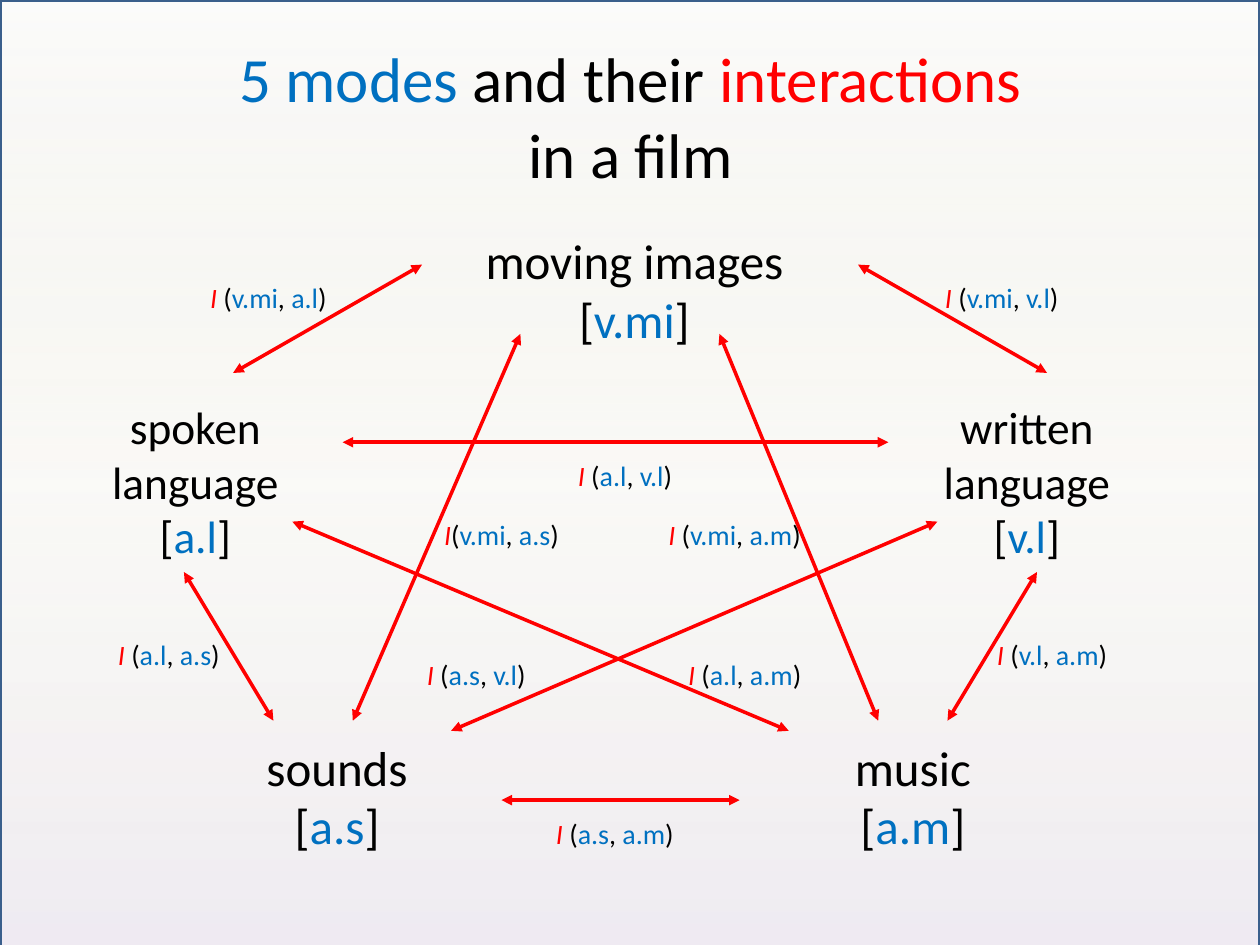
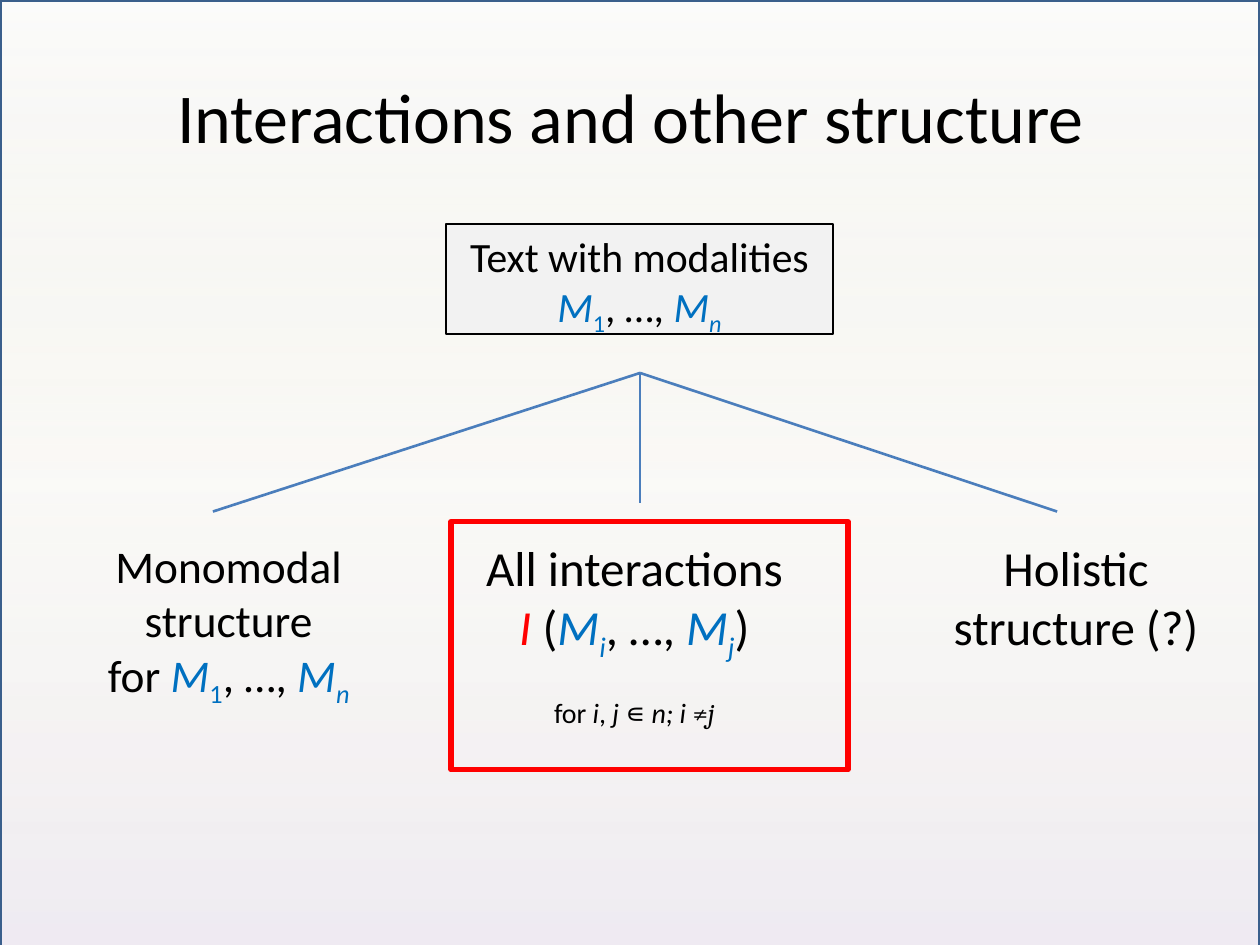
from lxml import etree
from pptx import Presentation
from pptx.dml.color import RGBColor
from pptx.enum.shapes import MSO_CONNECTOR, MSO_SHAPE
from pptx.enum.text import MSO_ANCHOR, PP_ALIGN
from pptx.oxml import parse_xml
from pptx.oxml.ns import nsdecls, qn
from pptx.util import Pt

RECT, STRAIGHT = MSO_SHAPE.RECTANGLE, MSO_CONNECTOR.STRAIGHT
TOP, MIDDLE, CENTER = MSO_ANCHOR.TOP, MSO_ANCHOR.MIDDLE, PP_ALIGN.CENTER
PX = 9144  # EMU per px, 100 px to the inch

# ---- Theme ----
THEME = {
    "font": "Calibri", "math_font": "Cambria",
    "text": "000000", "mode": "0070C0", "action": "FF0000",
    "frame": "3A5F8C", "branch": "4B7EBC", "panel": "F2F2F2",
    "gradient": [(0, "F2F2F2", 30), (50, "C4BD97", 7), (100, "B3A2C7", 22)],
    "title": 40, "long_title": 36, "node": 28, "tight_node": 25.9,
    "root": 23.8, "label": 16,
}
# Run styles: colour key, italic, baseline in percent, font key
STYLES = {
    "text": ("text", False, 0, "font"),
    "it": ("text", True, 0, "font"),
    "mode": ("mode", False, 0, "font"),
    "var": ("mode", True, 0, "font"),
    "sub": ("mode", False, -25, "font"),
    "subvar": ("mode", True, -25, "font"),
    "act": ("action", False, 0, "font"),
    "I": ("action", True, 0, "font"),
    "math": ("text", False, 0, "math_font"),
    "mathvar": ("text", True, 0, "math_font"),
}

# ---- Content shared by both slides ----
SLIDE_SIZE = (1000, 750)
BACKDROP_BOX = (0, 0, 1000, 769)
TITLE_BOX = (114, 29, 773, 125)
BREAK = ("\n", "text")
MODALITIES = [("M", "var"), ("1", "sub"), (", …, ", "text"), ("M", "var"), ("n", "subvar")]

# ---- Slide 1: modes and interactions ----
MODES_TITLE = [("5 modes ", "mode"), ("and their ", "text"), ("interactions", "act"),
               BREAK, ("in a film", "text")]
MODES = [  # name, code, box, size
    ("sounds", "a.s", (114, 580, 307, 118), "node"),
    ("spoken language", "a.l", (39, 312, 232, 134), "tight_node"),
    ("moving images", "v.mi", (350, 178, 307, 110), "node"),
    ("music", "a.m", (571, 580, 307, 118), "node"),
    ("written language", "v.l", (697, 312, 236, 134), "tight_node"),
]
LABEL_SIZE = (134, 47)
INTERACTIONS = [  # mark, two modes, arrow ends, label corner
    ("I ", "v.mi", "a.l", (185, 296, 335, 210), (146, 218)),
    ("I ", "v.mi", "v.l", (831, 296, 681, 210), (728, 218)),
    ("I ", "a.l", "a.s", (217, 572, 146, 454), (67, 501)),
    ("I ", "v.l", "a.m", (752, 572, 823, 454), (768, 501)),
    ("I ", "a.s", "a.m", (398, 635, 587, 635), (421, 643)),
    ("I", "v.mi", "a.s", (280, 572, 413, 265), (331, 406)),
    ("I ", "v.mi", "a.m", (697, 572, 571, 265), (516, 406)),
    ("I ", "a.l", "v.l", (272, 351, 705, 351), (429, 359)),
    ("I ", "a.l", "a.m", (232, 414, 626, 580), (524, 517)),
    ("I ", "a.s", "v.l", (358, 580, 744, 414), (311, 517)),
]

# ---- Slide 2: structure tree ----
TREE_TITLE = [("Interactions and other structure", "text")]
ROOT_BOX = (354, 178, 307, 87)
ROOT = [[("Text with modalities", "text")], MODALITIES]
FORK = (508, 296)
BRANCH_ENDS = [(169, 406), (839, 406), (508, 399)]
HIGHLIGHT_BOX = (358, 414, 315, 197)
MONOMODAL = [[("Monomodal structure", "text")], [("for ", "text")] + MODALITIES]
HOLISTIC = [[("Holistic", "text"), BREAK, ("structure (?)", "text")]]
ALL_INTERACTIONS = [
    [("All interactions", "text")],
    [("I ", "I"), ("(", "text"), ("M", "var"), ("i", "subvar"), (", …, ", "text"),
     ("M", "var"), ("j", "subvar"), (")", "text")],
    [("for ", "text"), ("i", "it"), (", ", "text"), ("j ", "it"), ("∊ ", "text"),
     ("n; i ", "it"), ("≠", "math"), ("j", "mathvar")],
]
LEAVES = [  # box, paragraphs, size of each, (space before, after) of each
    ((28, 422, 307, 134), MONOMODAL, ["tight_node"] * 2, [(0, 0)] * 2),
    ((350, 422, 307, 244), ALL_INTERACTIONS, ["node", "node", "label"],
     [(6, 0), (0, 12), (6, 12)]),
    ((744, 422, 220, 244), HOLISTIC, ["node"], [(6, 12)]),
]


def emu(lengths):
    return [n * PX for n in lengths]


def rgb(key):
    return RGBColor.from_string(THEME[key])


def write(tf, paras, sizes, anchor=TOP, spaces=None):
    """Fill a text frame with paragraphs of (text, style) runs."""
    tf.word_wrap, tf.vertical_anchor = True, anchor
    for i, (runs, size) in enumerate(zip(paras, sizes)):
        p = tf.add_paragraph() if i else tf.paragraphs[0]
        before, after = spaces[i] if spaces else (0, 0)
        fmt = {"alignment": CENTER, "space_before": Pt(before), "space_after": Pt(after)}
        for name, value in fmt.items():
            setattr(p, name, value)
        for text, style in runs:
            if text == "\n":
                p.add_line_break()
                continue
            color, italic, base, font = STYLES[style]
            r = p.add_run()
            r.text = text
            fmt = {"name": THEME[font], "size": Pt(THEME[size]), "italic": italic}
            for name, value in fmt.items():
                setattr(r.font, name, value)
            r.font.color.rgb = rgb(color)
            if base:
                r._r.get_or_add_rPr().set("baseline", str(base * 1000))


def add_text(s, box, paras, sizes, **options):
    write(s.shapes.add_textbox(*emu(box)).text_frame, paras, sizes, **options)


def add_box(s, box, line, width, fill=None):
    sp = s.shapes.add_shape(RECT, *emu(box))
    sp.shadow.inherit = False
    sp.line.color.rgb, sp.line.width = rgb(line), Pt(width)
    if fill:
        sp.fill.solid()
        sp.fill.fore_color.rgb = rgb(fill)
    else:
        sp.fill.background()
    return sp


def add_line(s, ends, color, width, arrows=False):
    sp = s.shapes.add_connector(STRAIGHT, *emu(ends))
    sp.line.color.rgb, sp.line.width = rgb(color), Pt(width)
    if arrows:
        for tag in ("a:headEnd", "a:tailEnd"):
            etree.SubElement(sp.line._get_or_add_ln(), qn(tag), type="triangle")
    etree.SubElement(sp._element.spPr, qn("a:effectLst"))


def add_backdrop(s):
    """Framed panel with a translucent vertical gradient."""
    sp = add_box(s, BACKDROP_BOX, "frame", 2)
    stops = "".join(
        f'<a:gs pos="{pos * 1000}"><a:srgbClr val="{color}">'
        f'<a:alpha val="{alpha * 1000}"/></a:srgbClr></a:gs>'
        for pos, color, alpha in THEME["gradient"])
    grad = parse_xml(f'<a:gradFill {nsdecls("a")} rotWithShape="1"><a:gsLst>{stops}</a:gsLst>'
                     '<a:lin ang="5400000" scaled="0"/></a:gradFill>')
    spPr = sp._element.spPr
    spPr.replace(spPr.find(qn("a:noFill")), grad)


def new_slide(prs, title, size):
    s = prs.slides.add_slide(prs.slide_layouts[6])
    add_backdrop(s)
    add_text(s, TITLE_BOX, [title], [size], anchor=MIDDLE)
    return s


def build_modes(prs):
    s = new_slide(prs, MODES_TITLE, "long_title")
    for name, code, box, size in MODES:
        paras = [[(name, "text")], [("[", "text"), (code, "mode"), ("]", "text")]]
        add_text(s, box, paras, [size] * 2)
    for _, _, _, ends, _ in INTERACTIONS:
        add_line(s, ends, "action", 2, arrows=True)
    for mark, a, b, _, corner in INTERACTIONS:
        runs = [(mark, "I"), ("(", "text"), (a, "mode"), (", ", "text"),
                (b, "mode"), (")", "text")]
        add_text(s, corner + LABEL_SIZE, [runs], ["label"])


def build_tree(prs):
    s = new_slide(prs, TREE_TITLE, "title")
    for end in BRANCH_ENDS:
        add_line(s, FORK + end, "branch", 1.5)
    for box, paras, sizes, spaces in LEAVES:
        add_text(s, box, paras, sizes, spaces=spaces)
    root = add_box(s, ROOT_BOX, "text", 1, fill="panel")
    write(root.text_frame, ROOT, ["root"] * 2)
    add_box(s, HIGHLIGHT_BOX, "action", 3)


def main():
    prs = Presentation()
    prs.slide_width, prs.slide_height = emu(SLIDE_SIZE)
    build_modes(prs)
    build_tree(prs)
    prs.save("out.pptx")


if __name__ == "__main__":
    main()
